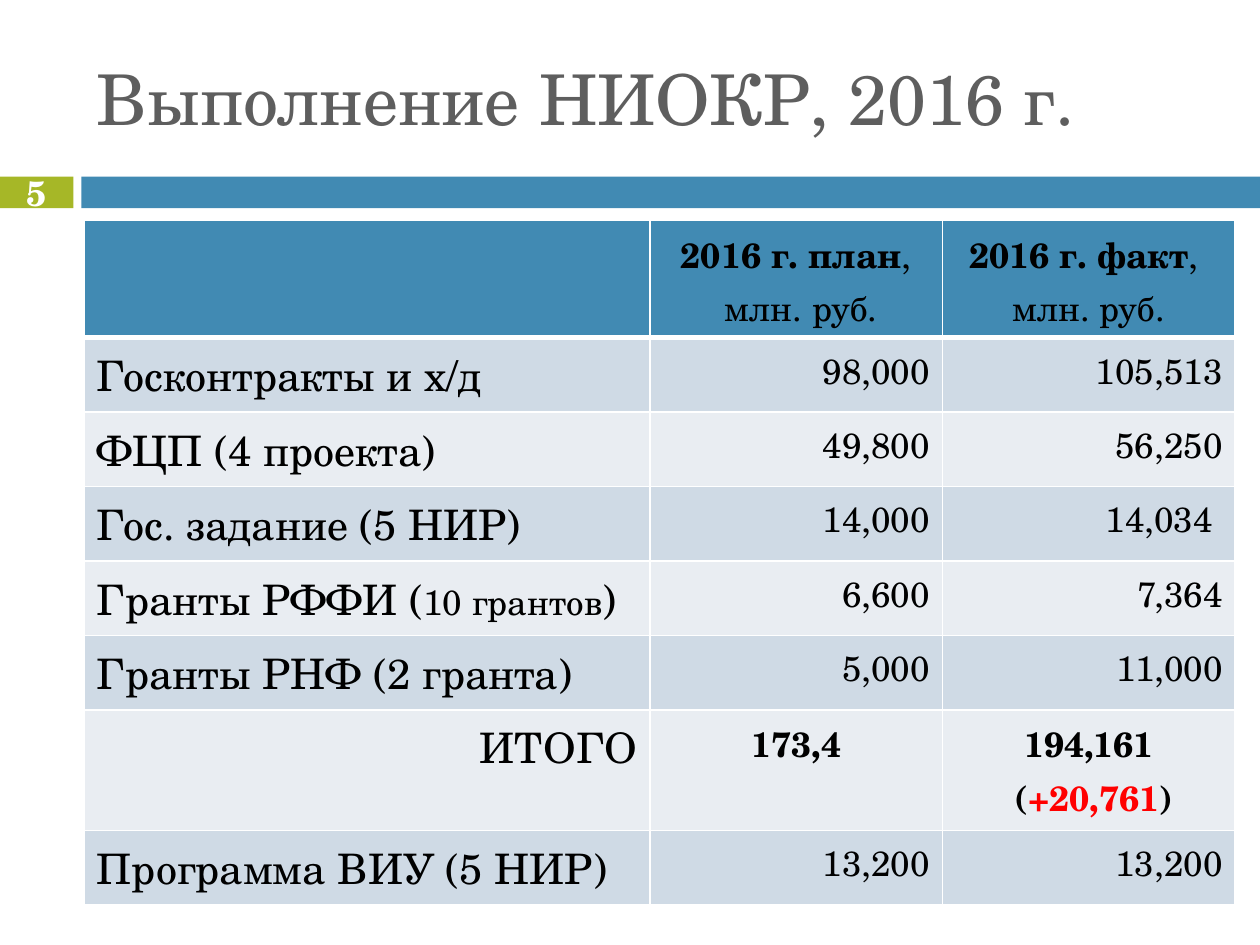
from dataclasses import dataclass

from lxml.etree import SubElement
from pptx import Presentation
from pptx.dml.color import RGBColor
from pptx.enum.shapes import MSO_SHAPE
from pptx.enum.text import MSO_ANCHOR, PP_ALIGN
from pptx.oxml.ns import qn
from pptx.util import Cm, Pt

FONT = "TeX Gyre Schola"
COLORS = {
    "title": "5E5E5E",
    "green": "A6B727",
    "blue": "418AB3",
    "odd_row": "CFDAE5",
    "even_row": "E9EDF2",
    "white": "FFFFFF",
    "black": "000000",
    "red": "FF0000",
}
LABEL_SIZE, VALUE_SIZE = 24, 20
COLUMN_WIDTHS = (Cm(11.4), Cm(5.9), Cm(5.9))
HEADER_HEIGHT, ROW_HEIGHT, TOTAL_HEIGHT = Cm(2.36), Cm(1.5), Cm(2.43)
ROW_HEIGHTS = (HEADER_HEIGHT, *[ROW_HEIGHT] * 5, TOTAL_HEIGHT, ROW_HEIGHT)
THIN_BORDER, HEADER_BORDER = Pt(1), Pt(3)


@dataclass(frozen=True)
class TextRun:
    text: str
    size: int = VALUE_SIZE
    bold: bool = False
    color: str = "black"


@dataclass(frozen=True)
class CellText:
    paragraphs: tuple[tuple[TextRun, ...], ...]
    alignment: PP_ALIGN = PP_ALIGN.RIGHT


@dataclass(frozen=True)
class Bar:
    left: Cm
    width: Cm
    color: str


BARS = (Bar(Cm(0), Cm(1.48), "green"), Bar(Cm(1.64), Cm(23.76), "blue"))


def label(text: str, alignment: PP_ALIGN = PP_ALIGN.LEFT) -> CellText:
    return CellText(((TextRun(text, LABEL_SIZE),),), alignment)


def value(text: str) -> CellText:
    return CellText(((TextRun(text),),))


def centered(*paragraphs: tuple[TextRun, ...]) -> CellText:
    return CellText(paragraphs, PP_ALIGN.CENTER)


def bold(text: str, color: str = "black") -> TextRun:
    return TextRun(text, bold=True, color=color)


ROWS = (
    (
        label(""),
        centered((bold("2016 г. план"), TextRun(",")), (TextRun(" млн. руб."),)),
        centered((bold("2016 г. факт"), TextRun(", ")), (TextRun("млн. руб."),)),
    ),
    (label("Госконтракты и х/д"), value("98,000"), value("105,513")),
    (label("ФЦП (4 проекта)"), value("49,800"), value("56,250")),
    (label("Гос. задание (5 НИР)"), value("14,000"), value("14,034 ")),
    (
        CellText(
            (
                (
                    TextRun("Гранты РФФИ (", LABEL_SIZE),
                    TextRun("10 грантов"),
                    TextRun(")", LABEL_SIZE),
                ),
            ),
            PP_ALIGN.LEFT,
        ),
        value("6,600"),
        value("7,364"),
    ),
    (label("Гранты РНФ (2 гранта)"), value("5,000"), value("11,000")),
    (
        label("ИТОГО", PP_ALIGN.RIGHT),
        centered((bold("173,4"),)),
        centered(
            (bold("194,161"),),
            (bold(" ("), bold("+20,761", "red"), bold(")")),
        ),
    ),
    (label("Программа ВИУ (5 НИР)"), value("13,200"), value("13,200")),
)


def rgb(name: str) -> RGBColor:
    return RGBColor.from_string(COLORS[name])


def format_font(font, size: int, color: str, is_bold: bool = False) -> None:
    font.name = FONT
    font.size = Pt(size)
    font.bold = is_bold
    font.color.rgb = rgb(color)


def write_title(slide, text: str) -> None:
    title = slide.shapes.title
    title.left, title.top, title.width, title.height = Cm(1.7), Cm(0.53), Cm(23.18), Cm(2.87)
    title.text_frame.text = text
    title.text_frame.vertical_anchor = MSO_ANCHOR.MIDDLE
    paragraph = title.text_frame.paragraphs[0]
    paragraph.alignment = PP_ALIGN.LEFT
    format_font(paragraph.runs[0].font, 40, "title")


def draw_bar(slide, bar: Bar) -> None:
    shape = slide.shapes.add_shape(MSO_SHAPE.RECTANGLE, bar.left, Cm(3.56), bar.width, Cm(0.64))
    shape.shadow.inherit = False
    shape.fill.solid()
    shape.fill.fore_color.rgb = rgb(bar.color)
    shape.line.fill.background()


def write_slide_number(slide, number: str) -> None:
    text_frame = slide.shapes.add_textbox(Cm(0), Cm(3.53), Cm(1.48), Cm(0.69)).text_frame
    text_frame.word_wrap = True
    text_frame.margin_top = text_frame.margin_bottom = 0
    text_frame.vertical_anchor = MSO_ANCHOR.MIDDLE
    text_frame.text = number
    paragraph = text_frame.paragraphs[0]
    paragraph.alignment = PP_ALIGN.CENTER
    format_font(paragraph.runs[0].font, 20, "white", True)


def set_borders(cell, top: int, bottom: int) -> None:
    """Draw white borders; call before the fill, which must follow them in the XML."""
    properties = cell._tc.get_or_add_tcPr()
    widths = {"a:lnL": THIN_BORDER, "a:lnR": THIN_BORDER, "a:lnT": top, "a:lnB": bottom}
    for tag, width in widths.items():
        line = SubElement(properties, qn(tag), w=str(width))
        fill = SubElement(line, qn("a:solidFill"))
        SubElement(fill, qn("a:srgbClr"), val=COLORS["white"])


def fill_cell(cell, content: CellText, color: str) -> None:
    cell.fill.solid()
    cell.fill.fore_color.rgb = rgb(color)
    text_frame = cell.text_frame
    for index, text_runs in enumerate(content.paragraphs):
        paragraph = text_frame.add_paragraph() if index else text_frame.paragraphs[0]
        paragraph.alignment = content.alignment
        for text_run in text_runs:
            if text_run.text:
                run = paragraph.add_run()
                run.text = text_run.text
                format_font(run.font, text_run.size, text_run.color, text_run.bold)


def draw_table(slide) -> None:
    table = slide.shapes.add_table(
        len(ROWS), len(COLUMN_WIDTHS), Cm(1.7), Cm(4.45),
        sum(COLUMN_WIDTHS), sum(ROW_HEIGHTS),
    ).table
    for column, width in zip(table.columns, COLUMN_WIDTHS):
        column.width = width
    for row_index, (row, height, contents) in enumerate(zip(table.rows, ROW_HEIGHTS, ROWS)):
        row.height = height
        band = "odd_row" if row_index % 2 else "even_row"
        color = band if row_index else "blue"
        top = HEADER_BORDER if row_index == 1 else THIN_BORDER
        bottom = THIN_BORDER if row_index else HEADER_BORDER
        for cell, content in zip(row.cells, contents):
            set_borders(cell, top, bottom)
            fill_cell(cell, content, color)


def main() -> None:
    presentation = Presentation()
    presentation.slide_width, presentation.slide_height = Cm(25.4), Cm(19.05)
    slide = presentation.slides.add_slide(presentation.slide_layouts[5])
    for bar in BARS:
        draw_bar(slide, bar)
    write_title(slide, "Выполнение НИОКР, 2016 г.")
    write_slide_number(slide, "5")
    draw_table(slide)
    presentation.save("out.pptx")


if __name__ == "__main__":
    main()
